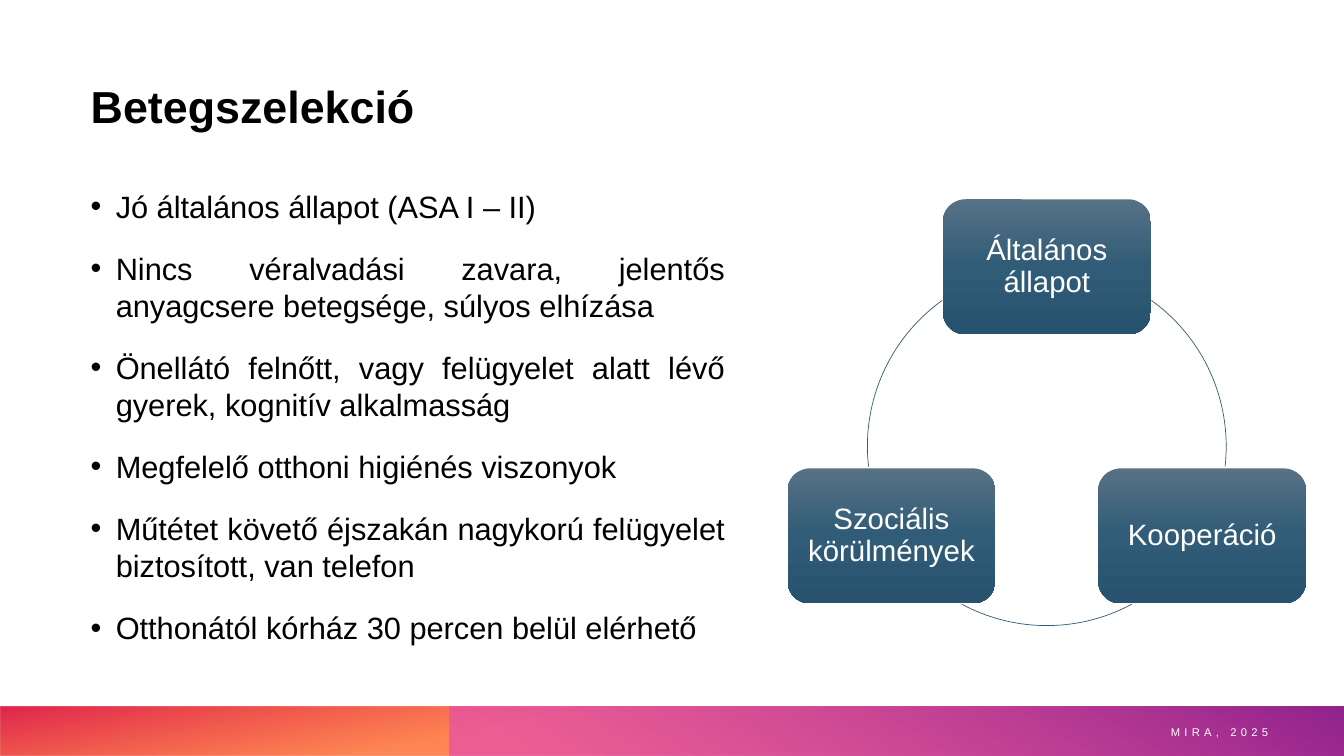
import math

from lxml import etree
from pptx import Presentation
from pptx.dml.color import RGBColor
from pptx.enum import shapes, text
from pptx.oxml import ns
from pptx.util import Pt

FONT = "Arial"
COLOURS = {
    "text": "000000", "light": "FFFFFF", "arc": "335B74",
    "node_top": "577185", "node_middle": "305C77", "node_bottom": "28526D",
    "orange": "FE4A00", "red": "DA002F", "pink": "E349BB", "purple": "92248E",
}
CRITERIA = [
    "Jó általános állapot (ASA I – II)",
    "Nincs véralvadási zavara, jelentős anyagcsere betegsége, súlyos elhízása",
    "Önellátó felnőtt, vagy felügyelet alatt lévő gyerek, kognitív alkalmasság",
    "Megfelelő otthoni higiénés viszonyok",
    "Műtétet követő éjszakán nagykorú felügyelet biztosított, van telefon",
    "Otthonától kórház 30 percen belül elérhető",
]
FACTORS = ["Általános állapot", "Kooperáció", "Szociális körülmények"]
ARCS = [(305.7, 6.5), (61.7, 118.3), (173.5, 234.3)]


def colour(name):
    return RGBColor.from_string(COLOURS[name])


def format_font(paragraph, size, name, bold=False):
    for run in paragraph.runs:
        run.font.name = FONT
        run.font.size = Pt(size)
        run.font.bold = bold
        run.font.color.rgb = colour(name)


def add_plain_shape(slide, kind, box):
    shape = slide.shapes.add_shape(kind, *map(Pt, box))
    shape.shadow.inherit = False
    return shape


def fill_gradient(shape, stops, angle):
    shape.line.fill.background()
    shape.fill.gradient()
    gradient = shape._element.spPr.find(ns.qn("a:gradFill"))
    gradient.set("rotWithShape", "1")
    for child in list(gradient):
        gradient.remove(child)
    stop_list = etree.SubElement(gradient, ns.qn("a:gsLst"))
    for position, name, opacity in stops:
        stop = etree.SubElement(stop_list, ns.qn("a:gs"), pos=str(position * 1000))
        value = etree.SubElement(stop, ns.qn("a:srgbClr"), val=COLOURS[name])
        if opacity < 100:
            etree.SubElement(value, ns.qn("a:alpha"), val=str(opacity * 1000))
    etree.SubElement(gradient, ns.qn("a:lin"), ang=str(angle * 60000), scaled="0")


def add_footer(slide, box):
    left, top, width, height = box
    accent_left = left + 321.1
    bars = [
        (left, 180, [(62, "orange", 67), (100, "red", 85)], 100),
        (accent_left, 0, [(9, "pink", 62), (99, "purple", 100)], 240),
    ]
    for bar_left, rotation, stops, angle in bars:
        bar_box = (bar_left, top, left + width - bar_left, height)
        bar = add_plain_shape(slide, shapes.MSO_SHAPE.RECTANGLE, bar_box)
        bar.rotation = rotation
        bar._element.spPr.find(ns.qn("a:xfrm")).set("flipH", "1")
        fill_gradient(bar, stops, angle)


def add_footer_label(slide, box):
    frame = slide.shapes.add_textbox(*map(Pt, box)).text_frame
    frame.word_wrap = True
    frame.vertical_anchor = text.MSO_ANCHOR.MIDDLE
    frame.text = "MIRA, 2025"
    paragraph = frame.paragraphs[0]
    paragraph.alignment = text.PP_ALIGN.RIGHT
    format_font(paragraph, 8, "light")
    paragraph.runs[0]._r.get_or_add_rPr().set("spc", "300")


def add_title(slide, box):
    title = slide.shapes.title
    title.left, title.top, title.width, title.height = map(Pt, box)
    frame = title.text_frame
    frame.text = "Betegszelekció"
    frame.auto_size = text.MSO_AUTO_SIZE.NONE
    frame.vertical_anchor = text.MSO_ANCHOR.BOTTOM
    paragraph = frame.paragraphs[0]
    paragraph.alignment = text.PP_ALIGN.LEFT
    paragraph.line_spacing = 0.9
    format_font(paragraph, 32, "text", bold=True)


def add_criteria(slide, box):
    frame = slide.shapes.add_textbox(*map(Pt, box)).text_frame
    frame.word_wrap = True
    frame.text = "\n".join(CRITERIA)
    for index, paragraph in enumerate(frame.paragraphs):
        paragraph.alignment = text.PP_ALIGN.JUSTIFY
        paragraph.line_spacing = 1.0
        paragraph.space_before = Pt(18 if index else 0)
        properties = paragraph._p.get_or_add_pPr()
        properties.set("marL", str(Pt(18)))
        properties.set("indent", str(-Pt(18)))
        etree.SubElement(properties, ns.qn("a:buFont"), typeface=FONT)
        etree.SubElement(properties, ns.qn("a:buChar"), char="•")
        format_font(paragraph, 22, "text")


def add_node(slide, box, label):
    node = add_plain_shape(slide, shapes.MSO_SHAPE.ROUNDED_RECTANGLE, box)
    fill_gradient(node, [(0, "node_top", 100), (50, "node_middle", 100),
                         (100, "node_bottom", 100)], 90)
    frame = node.text_frame
    frame.word_wrap = True
    frame.margin_left = frame.margin_right = Pt(4)
    frame.vertical_anchor = text.MSO_ANCHOR.MIDDLE
    frame.text = label
    paragraph = frame.paragraphs[0]
    paragraph.alignment = text.PP_ALIGN.CENTER
    paragraph.line_spacing = 0.9
    format_font(paragraph, 21, "light")


def add_cycle(slide, box):
    left, top, diameter, _ = box
    radius = diameter / 2
    node_width, node_height = 148.5, 96.5
    for index, (label, (start, end)) in enumerate(zip(FACTORS, ARCS)):
        angle = math.radians(-90 + index * 360 / len(FACTORS))
        node_left = left + radius * (1 + math.cos(angle)) - node_width / 2
        node_top = top + radius * (1 + math.sin(angle)) - node_height / 2
        add_node(slide, (node_left, node_top, node_width, node_height), label)
        arc = add_plain_shape(slide, shapes.MSO_SHAPE.ARC, box)
        arc.adjustments[0] = start * 0.6
        arc.adjustments[1] = end * 0.6
        arc.fill.background()
        arc.line.color.rgb = colour("arc")
        arc.line.width = Pt(0.5)


def main():
    presentation = Presentation()
    presentation.slide_width, presentation.slide_height = Pt(960), Pt(540)
    slide = presentation.slides.add_slide(presentation.slide_layouts[5])
    add_footer(slide, (0, 504.7, 960, 35.3))
    add_criteria(slide, (57.6, 130.3, 467.3, 386.6))
    add_title(slide, (57.6, 23, 853.9, 75.6))
    add_cycle(slide, (619.6, 190.6, 256.3, 256.3))
    add_footer_label(slide, (545, 508.3, 368, 28.8))
    presentation.save("out.pptx")


if __name__ == "__main__":
    main()
